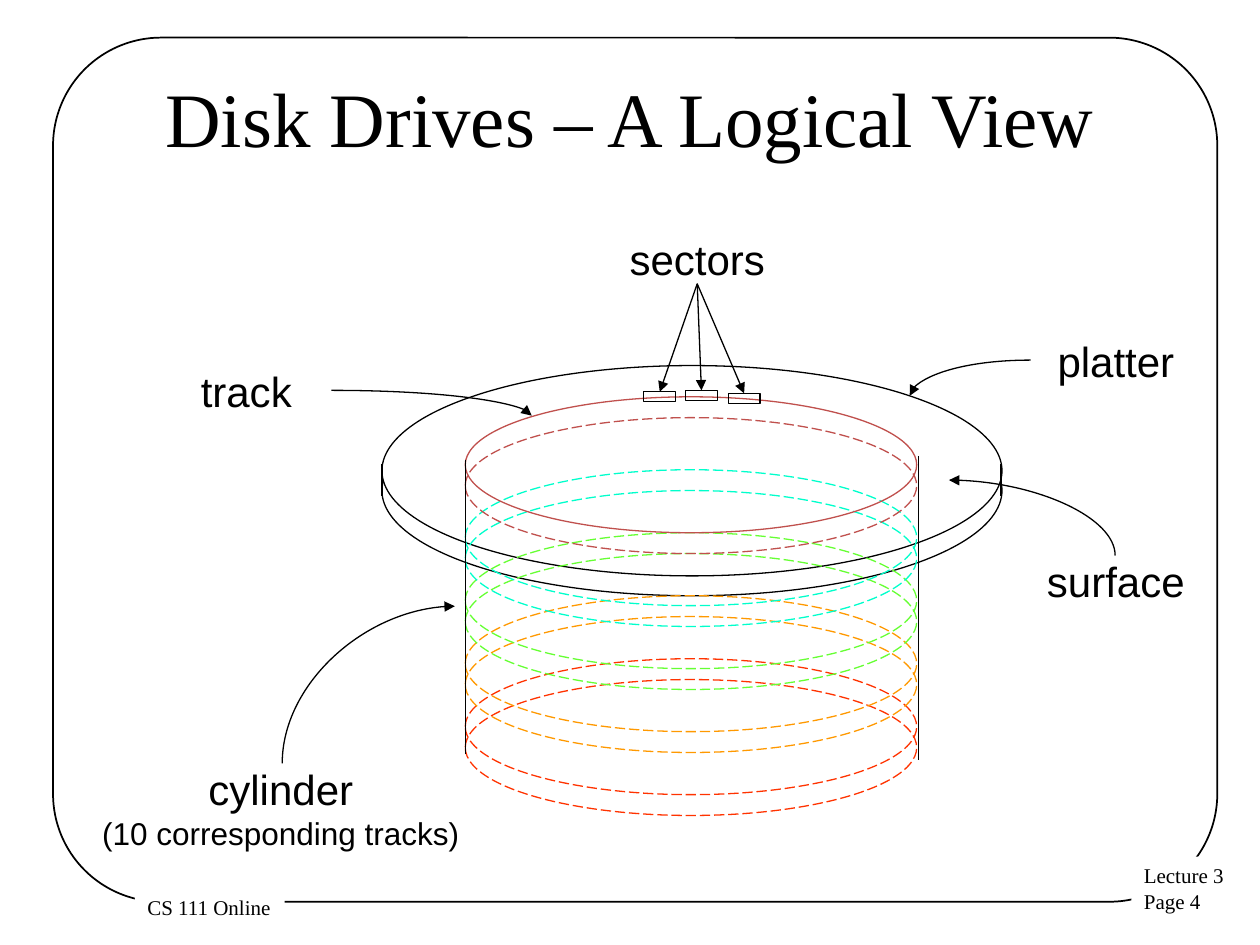
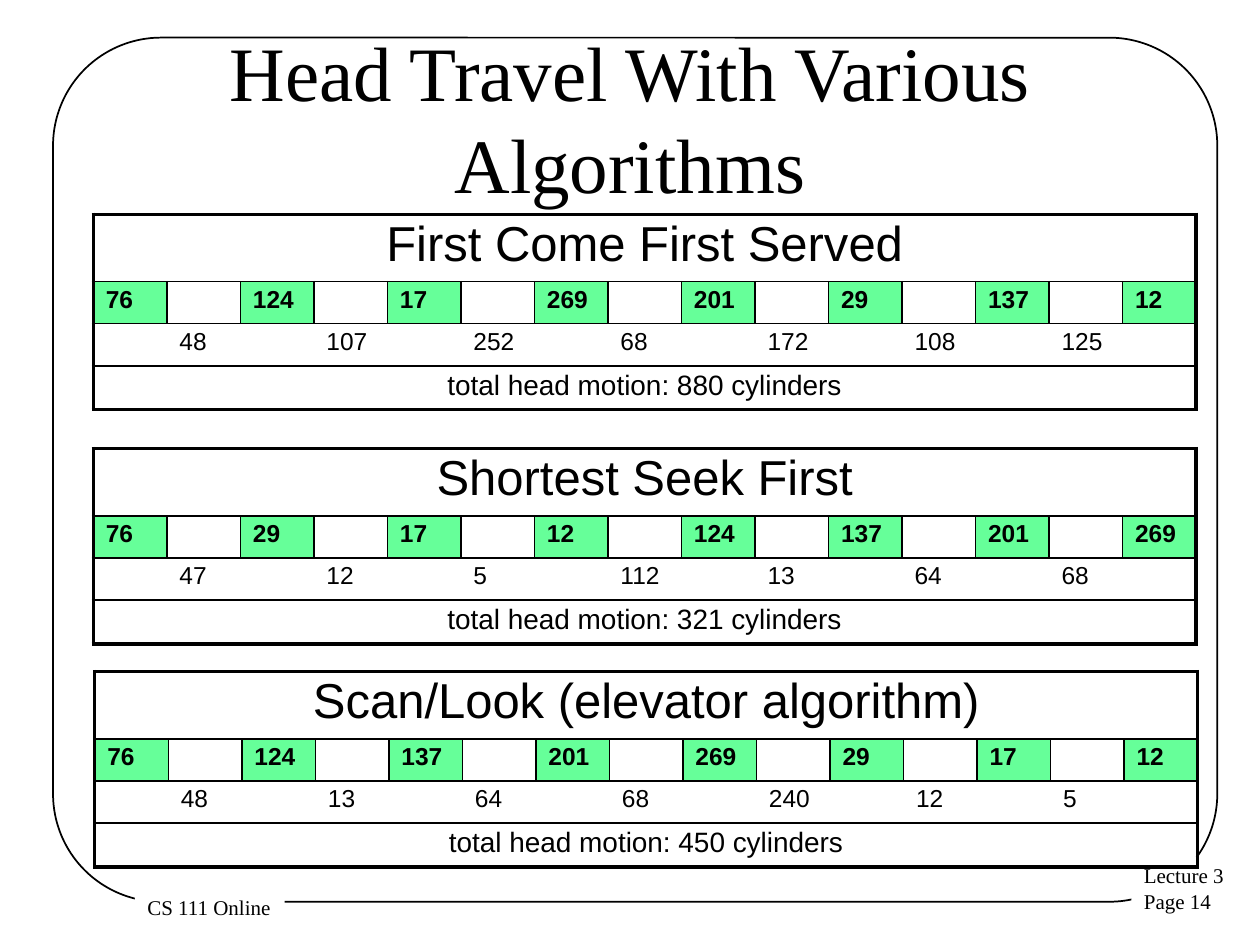
from lxml.etree import SubElement as Sub
from pptx import Presentation
from pptx.dml.color import RGBColor as RGB
from pptx.enum.dml import MSO_LINE as Dash
from pptx.enum.shapes import MSO_CONNECTOR as Link, MSO_SHAPE as Form
from pptx.enum.text import MSO_ANCHOR as Anchor, MSO_AUTO_SIZE as Fit, PP_ALIGN as Align
from pptx.oxml.ns import qn
from pptx.util import Cm, Pt

HUES = {
    "ink": "000000", "paper": "FFFFFF", "stop": "66FF99",
    "red": "FF3300", "gold": "FF9900", "lime": "66FF33",
    "aqua": "00FFCC", "brick": "C0504D",
}
SERIF = "Times New Roman"
SANS = "Arial"
THIN, THICK = 1, 2.25


def hue(name):
    return RGB.from_string(HUES[name])


def write(frame, text, size=24, face=SANS, align=Align.LEFT, bold=False, lead=None):
    para = frame.add_paragraph() if frame.text else frame.paragraphs[0]
    para.alignment = align
    if lead:
        para.line_spacing = lead
    if not text:
        Sub(para._p, qn("a:endParaRPr"), sz=str(size * 100))
        return
    run = para.add_run()
    run.text = text
    run.font.size = Pt(size)
    run.font.name = face
    run.font.bold = bold
    run.font.color.rgb = hue("ink")


class Deck:
    def __init__(self):
        self.show = Presentation()
        self.show.slide_width, self.show.slide_height = Cm(25.4), Cm(19.05)
        self.slide = None

    def page(self, title, num):
        self.slide = self.show.slides.add_slide(self.show.slide_layouts[5])
        self.frame()
        self.note(22.81, 17.27, 2.13, 1.3, "Lecture 3", f"Page {num}")
        self.note(2.72, 17.91, 3.02, 0.76, "CS 111 Online")
        head = self.slide.shapes.title
        head.left, head.top, head.width, head.height = map(Cm, (1.27, 0.76, 22.86, 3.18))
        head.text_frame.auto_size = Fit.NONE
        head.text_frame.vertical_anchor = Anchor.MIDDLE
        write(head.text_frame, title, size=44, face=SERIF, align=Align.CENTER)

    def frame(self):
        edge = self.shape(Form.ROUNDED_RECTANGLE, 1.07, 0.76, 23.47, 17.42, wide=1)
        edge.adjustments[0] = 0.125

    def note(self, x, y, w, h, *lines):
        box = self.slide.shapes.add_textbox(Cm(x), Cm(y), Cm(w), Cm(h))
        box.fill.solid()
        box.fill.fore_color.rgb = hue("paper")
        box.text_frame.word_wrap = False
        for line in lines:
            write(box.text_frame, line, size=12, face=SERIF)

    def label(self, x, y, text, w=3.43, h=1.02, sub=None):
        box = self.slide.shapes.add_textbox(Cm(x), Cm(y), Cm(w), Cm(h))
        body = box.text_frame
        body.word_wrap = True
        body.margin_left = body.margin_right = body.margin_top = body.margin_bottom = 0
        write(body, text, align=Align.CENTER)
        if sub:
            write(body, sub, size=18, align=Align.CENTER)
        return box

    def shape(self, form, x, y, w, h, line="ink", wide=0.75, fill=None, dash=False):
        item = self.slide.shapes.add_shape(form, Cm(x), Cm(y), Cm(w), Cm(h))
        item.shadow.inherit = False
        if fill:
            item.fill.solid()
            item.fill.fore_color.rgb = hue(fill)
        else:
            item.fill.background()
        item.line.color.rgb = hue(line)
        item.line.width = Pt(wide)
        if dash:
            item.line.dash_style = Dash.LONG_DASH
        return item

    def line(self, x1, y1, x2, y2, kind=Link.STRAIGHT, arrow=False):
        item = self.slide.shapes.add_connector(kind, Cm(x1), Cm(y1), Cm(x2), Cm(y2))
        item.line.color.rgb = hue("ink")
        item.line.width = Pt(0.75)
        props = item._element.spPr
        if arrow:
            Sub(props.find(qn("a:ln")), qn("a:tailEnd"), type="triangle")
        Sub(props, qn("a:effectLst"))
        return item

    def join(self, start, end):
        item = self.line(0, 0, 1, 1, arrow=True)
        item.begin_connect(start, 2)
        item.end_connect(end, 0)

    def bend(self, x1, y1, x2, y2, rise=False):
        if rise:
            mx, my = (x1 + x2) / 2, (y1 + y2) / 2
            dx, dy = (x2 - x1) / 2, abs(y2 - y1) / 2
            x1, y1, x2, y2 = mx - dy, my - dx, mx + dy, my + dx
        item = self.line(x1, y1, x2, y2, Link.CURVE, arrow=True)
        props = item._element.spPr
        props.find(qn("a:prstGeom")).set("prst", "curvedConnector2")
        if rise:
            props.find(qn("a:xfrm")).set("rot", "16200000")

    def cell(self, cell, text, sides, fill=None, **style):
        props = cell._tc.get_or_add_tcPr()
        for side, wide in zip("LRTB", sides):
            edge = Sub(props, qn(f"a:ln{side}"), w=str(Pt(wide)))
            if wide:
                paint = Sub(edge, qn("a:solidFill"))
                Sub(paint, qn("a:srgbClr"), val=HUES["ink"])
            else:
                Sub(edge, qn("a:noFill"))
        if fill:
            cell.fill.solid()
            cell.fill.fore_color.rgb = hue(fill)
        else:
            cell.fill.background()
        write(cell.text_frame, text, lead=0.93, **style)

    def table(self, x, y, title, stops, moves, total):
        cols, tall = 2 * len(stops) - 1, (1.3, 0.81, 0.81, 0.84)
        last = cols - 1
        grid = self.slide.shapes.add_table(
            4, cols, Cm(x), Cm(y), Cm(22.23), Cm(sum(tall))).table
        grid.first_row = grid.horz_banding = False
        for row, high in zip(grid.rows, tall):
            row.height = Cm(high)
        for col in grid.columns:
            col.width = Cm(22.23 / cols)
        texts = {(0, 0): title, (3, 0): f"total head motion: {total} cylinders"}
        texts.update({(1, 2 * i): str(stop) for i, stop in enumerate(stops)})
        texts.update({(2, 2 * i + 1): str(move) for i, move in enumerate(moves)})
        sizes = (28, 14, 14, 16)
        for r in range(4):
            whole = r in (0, 3)
            inner = THIN if r == 1 else 0
            if whole:
                grid.cell(r, 0).merge(grid.cell(r, last))
            for c in range(cols):
                sides = (
                    THICK if c == 0 else inner,
                    THICK if c == last or whole and c == 0 else inner,
                    THICK if r == 0 else THIN,
                    THICK if r == 3 else THIN,
                )
                self.cell(
                    grid.cell(r, c), texts.get((r, c), ""), sides,
                    fill="stop" if r == 1 and c % 2 == 0 else None,
                    size=sizes[r], bold=r == 1,
                    align=Align.CENTER if whole else Align.LEFT)


def disk(deck):
    deck.page("Disk Drives – A Logical View", 4)
    deck.shape(Form.OVAL, 7.7, 7.77, 12.5, 4.24)
    deck.shape(Form.OVAL, 7.7, 7.37, 12.5, 4.24, fill="paper")
    deck.label(1.75, 15.39, "cylinder", w=7.82, h=2.62, sub="(10 corresponding tracks)")
    deck.label(20.78, 6.76, "platter")
    tracks = [(name, 13.28 - 1.27 * i)
              for i, name in enumerate(("red", "gold", "lime", "aqua"))]
    for name, top in tracks + [("brick", 8)]:
        for y in (top + 0.42, top):
            deck.shape(Form.OVAL, 9.38, y, 9.1, 2.74, line=name, dash=y != 8)
    deck.line(18.52, 9.19, 18.52, 15.32)
    deck.line(9.38, 9.27, 9.38, 15.19)
    deck.bend(5.69, 15.39, 9.17, 12.22, rise=True)
    deck.label(20.78, 11.2, "surface")
    deck.label(3.25, 7.37, "track")
    deck.bend(6.68, 7.87, 10.72, 8.38)
    deck.bend(22.48, 11.2, 19.13, 9.68, rise=True)
    deck.bend(20.78, 7.26, 18.34, 7.98)
    name = deck.label(12.34, 4.7, "sectors")
    for x, y in ((12.98, 7.9), (13.82, 7.87), (14.68, 7.93)):
        deck.join(name, deck.shape(Form.RECTANGLE, x, y, 0.64, 0.2))
    for x in (7.7, 20.18):
        deck.line(x, 10, x, 9.36)


def travel(deck):
    deck.page("Head Travel With Various Algorithms", 14)
    deck.table(1.91, 13.54, "Scan/Look (elevator algorithm)",
               (76, 124, 137, 201, 269, 29, 17, 12),
               (48, 13, 64, 68, 240, 12, 5), 450)
    deck.table(1.88, 4.32, "First Come First Served",
               (76, 124, 17, 269, 201, 29, 137, 12),
               (48, 107, 252, 68, 172, 108, 125), 880)
    deck.table(1.88, 9.04, "Shortest Seek First",
               (76, 29, 17, 12, 124, 137, 201, 269),
               (47, 12, 5, 112, 13, 64, 68), 321)


def main():
    deck = Deck()
    disk(deck)
    travel(deck)
    deck.show.save("out.pptx")


if __name__ == "__main__":
    main()
